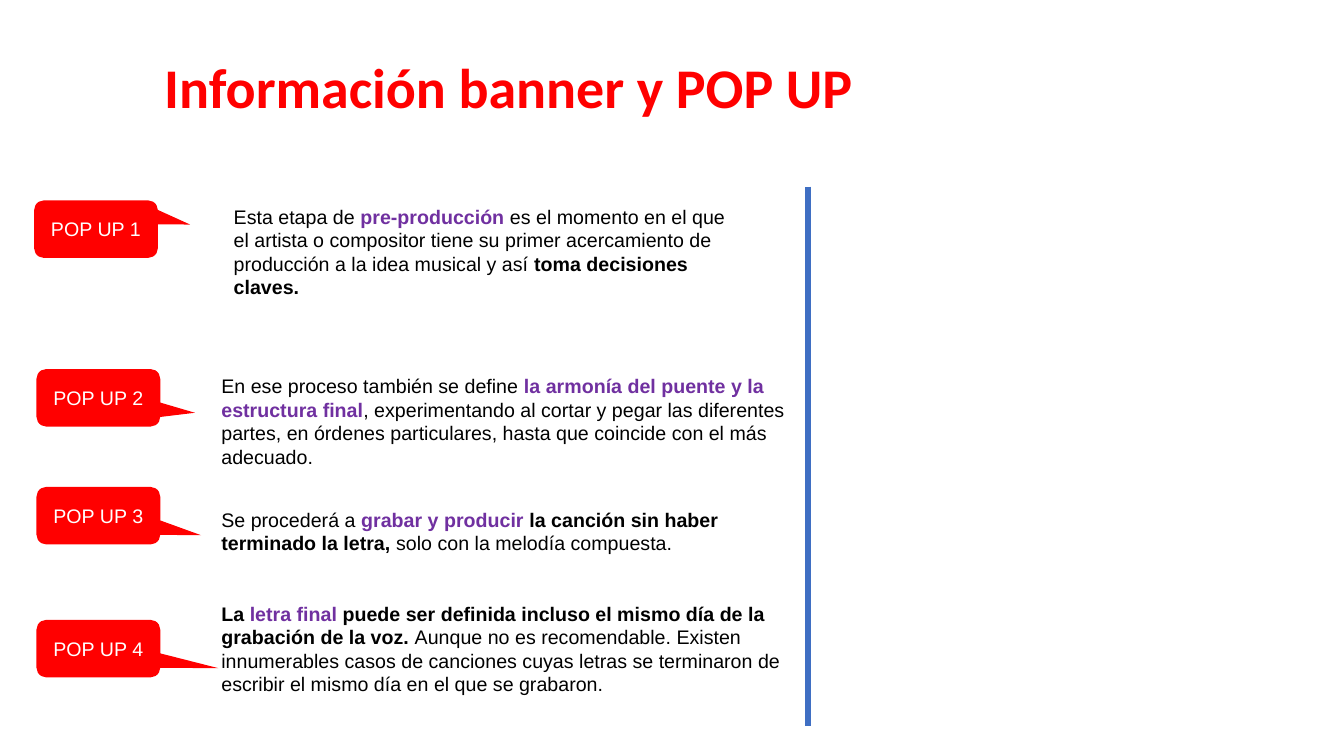
from lxml.etree import SubElement
from pptx import Presentation
from pptx.dml.color import RGBColor
from pptx.enum.shapes import MSO_CONNECTOR, MSO_SHAPE
from pptx.enum.text import MSO_ANCHOR, PP_ALIGN
from pptx.oxml.ns import qn
from pptx.util import Cm, Pt

RED, PURPLE, BLACK, WHITE, BLUE = "FF0000", "7030A0", "000000", "FFFFFF", "3F6FC3"
PLAIN = {}
BOLD = {"bold": True}
KEY = {"bold": True, "color": PURPLE}

TITLE = "Información banner y POP UP"
# Callout (left, top), pointer tip, text (left, top, width, height), runs; lengths in cm
POPUPS = [
    ((0.86, 5.05), (0.76, -0.08), (5.64, 5.03, 13.23, 2.64), [
        ("Esta etapa de ", PLAIN),
        ("pre-producción", KEY),
        (" es el momento en el que el artista o compositor tiene su primer "
         "acercamiento de producción a la idea musical y así ", PLAIN),
        ("toma decisiones claves.", BOLD)]),
    ((0.92, 9.3), (0.78, 0.26), (5.33, 9.3, 15.04, 2.64), [
        ("En ese proceso también se define", PLAIN),
        (" la armonía del puente y la estructura final", KEY),
        (", experimentando al cortar y pegar las diferentes partes, en órdenes "
         "particulares, hasta que coincide con el más adecuado.", PLAIN)]),
    ((0.92, 12.27), (0.83, 0.34), (5.33, 12.67, 14.63, 1.45), [
        ("Se procederá a ", PLAIN),
        ("grabar y producir ", KEY),
        ("la canción sin haber terminado la letra, ", BOLD),
        ("solo con la melodía compuesta.", PLAIN)]),
    ((0.92, 15.62), (0.97, 0.34), (5.33, 15.04, 14.71, 2.64), [
        ("La ", BOLD),
        ("letra final ", KEY),
        ("puede ser definida incluso el mismo día de la grabación de la voz. ", BOLD),
        ("Aunque no es recomendable. Existen innumerables casos de canciones cuyas "
         "letras se terminaron de escribir el mismo día en el que se grabaron.", PLAIN)]),
]
CALLOUT_SIZE = (3.12, 1.45)
CORNER = 0.17
DIVIDER_X, DIVIDER_TOP, DIVIDER_BOTTOM = 20.37, 4.7, 18.29


def rgb(color):
    return RGBColor.from_string(color)


def add_run(paragraph, text, size=14, font="Arial", color=BLACK, bold=False):
    run = paragraph.add_run()
    run.text = text
    run.font.size = Pt(size)
    run.font.name = font
    run.font.bold = bold
    run.font.color.rgb = rgb(color)


def add_text(slide, box):
    frame = slide.shapes.add_textbox(*map(Cm, box)).text_frame
    frame.word_wrap = True
    return frame


def add_callout(slide, corner, tip, label):
    callout = slide.shapes.add_shape(
        MSO_SHAPE.ROUNDED_RECTANGULAR_CALLOUT, *map(Cm, corner + CALLOUT_SIZE))
    for index, value in enumerate(tip + (CORNER,)):
        callout.adjustments[index] = value
    callout.shadow.inherit = False
    callout.fill.solid()
    callout.fill.fore_color.rgb = rgb(RED)
    callout.line.fill.background()
    frame = callout.text_frame
    frame.vertical_anchor = MSO_ANCHOR.MIDDLE
    frame.paragraphs[0].alignment = PP_ALIGN.CENTER
    add_run(frame.paragraphs[0], label, color=WHITE)


def add_divider(slide):
    divider = slide.shapes.add_connector(
        MSO_CONNECTOR.STRAIGHT, Cm(DIVIDER_X), Cm(DIVIDER_TOP), Cm(DIVIDER_X), Cm(DIVIDER_BOTTOM))
    divider.line.color.rgb = rgb(BLUE)
    divider.line.width = Pt(4.5)
    SubElement(divider._element.spPr, qn("a:effectLst"))


def main():
    deck = Presentation()
    deck.slide_width, deck.slide_height = Cm(33.87), Cm(19.05)
    slide = deck.slides.add_slide(deck.slide_layouts[6])

    heading = add_text(slide, (3.89, 0.89, 24.26, 2.77))
    heading.vertical_anchor = MSO_ANCHOR.MIDDLE
    heading.paragraphs[0].line_spacing = 0.9
    add_run(heading.paragraphs[0], TITLE, size=40, font="Calibri", color=RED, bold=True)

    for number, (corner, tip, box, runs) in enumerate(POPUPS, 1):
        add_callout(slide, corner, tip, f"POP UP {number}")
        paragraph = add_text(slide, box).paragraphs[0]
        for text, style in runs:
            add_run(paragraph, text, **style)

    add_divider(slide)
    deck.save("out.pptx")


if __name__ == "__main__":
    main()
